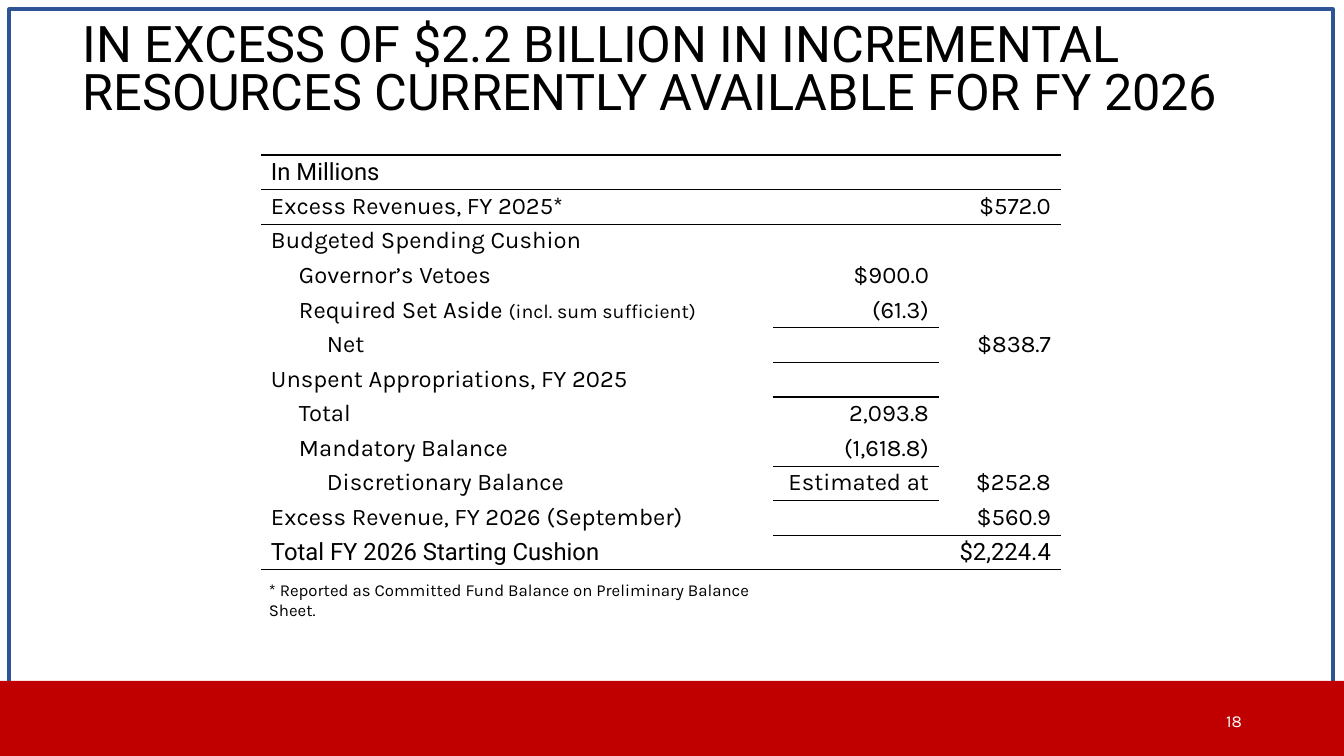
from lxml.etree import SubElement
from pptx import Presentation
from pptx.dml.color import RGBColor
from pptx.enum.shapes import MSO_SHAPE
from pptx.enum.text import MSO_ANCHOR, PP_ALIGN
from pptx.oxml.ns import qn
from pptx.util import Emu, Pt

BLACK = RGBColor(0x00, 0x00, 0x00)
WHITE = RGBColor(0xFF, 0xFF, 0xFF)
RED = RGBColor(0xC0, 0x00, 0x00)
BLUE = RGBColor(0x2F, 0x54, 0x96)
HEADING_FONT, BODY_FONT = "Roboto", "Karla"
NO_GRID_STYLE = "{2D5ABB26-0587-4C30-8999-92F81FD0307C}"

EMU_PER_PX = 914400 / 100.8
COLUMN_WIDTHS = (512, 166, 122)
ROW_HEIGHT = 34
INDENT = 28
TABLE_SIZE = 17

# Indent level, label, small remark, detail amount, total amount
BUDGET_ROWS = [
    (0, "In Millions", "", "", ""),
    (0, "Excess Revenues, FY 2025*", "", "", "$572.0"),
    (0, "Budgeted Spending Cushion", "", "", ""),
    (1, "Governor’s Vetoes", "", "$900.0", ""),
    (1, "Required Set Aside ", "(incl. sum sufficient)", "(61.3)", ""),
    (2, "Net", "", "", "$838.7"),
    (0, "Unspent Appropriations, FY 2025", "", "", ""),
    (1, "Total", "", "2,093.8", ""),
    (1, "Mandatory Balance", "", "(1,618.8)", ""),
    (2, "Discretionary Balance", "", "Estimated at", "$252.8"),
    (0, "Excess Revenue, FY 2026 (September)", "", "", "$560.9"),
    (0, "Total FY 2026 Starting Cushion", "", "", "$2,224.4"),
]
# Columns ruled above each row; the last entry closes the table
RULES = {0: (0, 1, 2), 1: (0, 1, 2), 5: (1,), 6: (1,), 9: (1,), 10: (1,),
         11: (2,), 12: (0, 1, 2)}


def px(length):
    return Emu(round(length * EMU_PER_PX))


def style_run(span, font, size, color=BLACK):
    span.font.name = font
    span.font.size = Pt(size)
    span.font.color.rgb = color


def add_rectangle(page, left, top, width, height, fill=None, line=None):
    box = page.shapes.add_shape(MSO_SHAPE.RECTANGLE, px(left), px(top), px(width), px(height))
    box.shadow.inherit = False
    if fill is None:
        box.fill.background()
    else:
        box.fill.solid()
        box.fill.fore_color.rgb = fill
    if line is None:
        box.line.fill.background()
    else:
        box.line.color.rgb = line
        box.line.width = Pt(2.25)


def add_text(page, left, top, width, height, text, font, size, color=BLACK,
             align=PP_ALIGN.LEFT, anchor=MSO_ANCHOR.TOP, spacing=1.0):
    box = page.shapes.add_textbox(px(left), px(top), px(width), px(height))
    frame = box.text_frame
    frame.word_wrap = True
    frame.vertical_anchor = anchor
    frame.text = text
    para = frame.paragraphs[0]
    para.alignment = align
    para.line_spacing = spacing
    style_run(para.runs[0], font, size, color)


def add_border(cell, edge):
    line = SubElement(cell._tc.get_or_add_tcPr(), qn(f"a:ln{edge}"), w=str(Pt(1)))
    fill = SubElement(line, qn("a:solidFill"))
    SubElement(fill, qn("a:srgbClr"), val=str(BLACK))


def fill_cell(cell, text, font, align, level=0, remark=""):
    cell.margin_left = cell.margin_right = px(10)
    cell.margin_top = cell.margin_bottom = px(3)
    cell.text_frame.text = text
    para = cell.text_frame.paragraphs[0]
    para.alignment = align
    if level:
        para._p.get_or_add_pPr().set("marL", str(px(level * INDENT)))
    for span in para.runs:
        style_run(span, font, TABLE_SIZE)
    if remark:
        span = para.add_run()
        span.text = remark
        style_run(span, font, 14)
    if not text:
        # Keeps an empty cell from stretching its row
        SubElement(para._p, qn("a:endParaRPr"), sz=str(TABLE_SIZE * 100))


def add_budget_table(page, left, top):
    count = len(BUDGET_ROWS)
    frame = page.shapes.add_table(count, len(COLUMN_WIDTHS), px(left), px(top),
                                  px(sum(COLUMN_WIDTHS)), px(count * ROW_HEIGHT))
    table = frame.table
    table.first_row = table.horz_banding = False
    table._tbl.tblPr.find(qn("a:tableStyleId")).text = NO_GRID_STYLE
    for column, width in zip(table.columns, COLUMN_WIDTHS):
        column.width = px(width)

    for row, (level, label, remark, detail, total) in enumerate(BUDGET_ROWS):
        table.rows[row].height = px(ROW_HEIGHT)
        font = HEADING_FONT if row in (0, count - 1) else BODY_FONT
        fill_cell(table.cell(row, 0), label, font, PP_ALIGN.LEFT, level, remark)
        fill_cell(table.cell(row, 1), detail, font, PP_ALIGN.RIGHT)
        fill_cell(table.cell(row, 2), total, font, PP_ALIGN.RIGHT)
        for column in range(len(COLUMN_WIDTHS)):
            cell = table.cell(row, column)
            for edge, boundary in (("T", row), ("B", row + 1)):
                if column in RULES.get(boundary, ()):
                    add_border(cell, edge)
            cell.fill.background()


def main():
    deck = Presentation()
    deck.slide_width, deck.slide_height = px(1344), px(756)
    page = deck.slides.add_slide(deck.slide_layouts[6])

    # Frame and footer band
    add_rectangle(page, 9, 9, 1324, 707, line=BLUE)
    add_rectangle(page, 0, 681, 1344, 75, fill=RED)

    # Title and slide number
    add_text(page, 73, 30, 1206, 84,
             "IN EXCESS OF $2.2 BILLION IN INCREMENTAL RESOURCES "
             "CURRENTLY AVAILABLE FOR FY 2026",
             HEADING_FONT, 36, anchor=MSO_ANCHOR.MIDDLE, spacing=0.8)
    add_text(page, 950, 701, 302, 40, "18", BODY_FONT, 12, WHITE,
             PP_ALIGN.RIGHT, MSO_ANCHOR.MIDDLE)

    # Budget table and its footnote
    add_budget_table(page, 261, 155)
    add_text(page, 259, 575, 527, 50,
             "* Reported as Committed Fund Balance on Preliminary Balance Sheet.",
             BODY_FONT, 12)

    deck.save("out.pptx")


if __name__ == "__main__":
    main()
